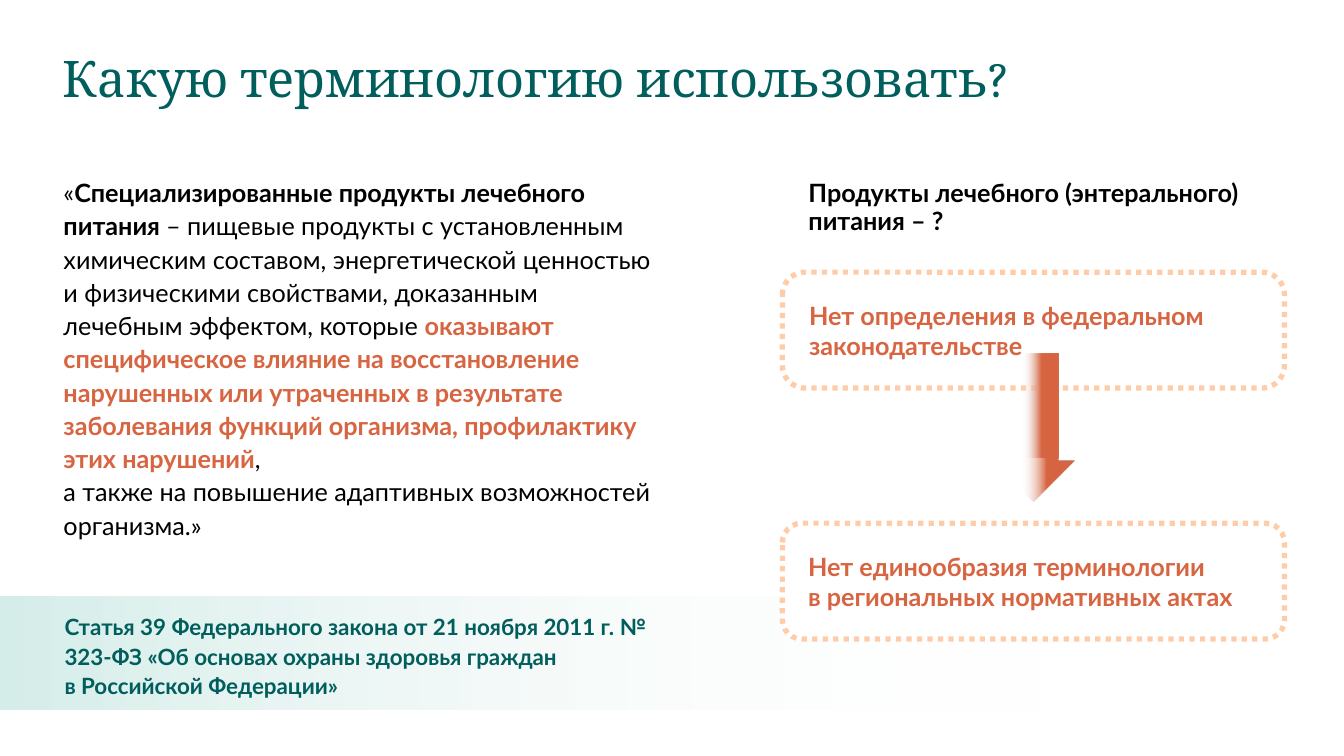
from dataclasses import dataclass

from lxml import etree
from pptx import Presentation
from pptx import util as u
from pptx.dml.color import RGBColor
from pptx.enum import dml, shapes, text
from pptx.oxml.ns import qn


@dataclass(frozen=True)
class Theme:
    """Colours, fonts and type sizes of the slide."""
    white: str = "FFFFFF"
    black: str = "000000"
    teal: str = "005E5C"
    mint: str = "D6EEEA"
    orange: str = "D86541"
    peach: str = "FFCCA9"
    grey: str = "F2F2F2"
    serif: str = "Cambria"
    sans: str = "Lato"
    title: int = 36
    body: int = 18
    source: int = 16


T = Theme()
TIGHT = (0, 0, 0.1, 0.05)
NORMAL = (0.1, 0.05, 0.1, 0.05)


def set_all(obj, values):
    """Set every attribute named in the dict."""
    for name, value in values.items():
        setattr(obj, name, value)


def place(box):
    """Turn a box in inches into lengths."""
    return [u.Inches(v) for v in box]


def write(tf, paragraphs, size, font=T.sans, insets=NORMAL, spacing=None,
          anchor=text.MSO_ANCHOR.TOP, indent=0):
    """Fill a frame with paragraphs of (words, colour, bold) runs."""
    sides = ("margin_left", "margin_top", "margin_right", "margin_bottom")
    set_all(tf, dict(zip(sides, place(insets)), word_wrap=True,
                     auto_size=text.MSO_AUTO_SIZE.NONE, vertical_anchor=anchor))
    for i, runs in enumerate(paragraphs):
        p = tf.add_paragraph() if i else tf.paragraphs[0]
        set_all(p, dict(alignment=text.PP_ALIGN.LEFT, line_spacing=spacing))
        if indent:
            p._p.get_or_add_pPr().set("marL", str(u.Inches(indent)))
        for words, colour, bold in runs:
            for j, line in enumerate(words.split("\n")):
                if j:
                    p.add_line_break()
                r = p.add_run()
                r.text = line
                set_all(r.font, dict(size=u.Pt(size), name=font, bold=bold))
                r.font.color.rgb = RGBColor.from_string(colour)


def add_shape(parent, kind, box):
    """Add a preset shape without shadow or line."""
    sp = parent.add_shape(kind, *place(box))
    sp.shadow.inherit = False
    sp.line.fill.background()
    return sp


def fade(sp, stops, angle):
    """Fill a shape with a gradient whose first stop is transparent."""
    sp.fill.gradient()
    sp.fill.gradient_angle = angle
    for stop, (position, colour) in zip(sp.fill.gradient_stops, stops):
        stop.position = position
        stop.color.rgb = RGBColor.from_string(colour)
    grad = sp._element.spPr.find(qn("a:gradFill"))
    grad.set("rotWithShape", "0")
    etree.SubElement(next(grad.iter(qn("a:srgbClr"))), qn("a:alpha"), val="0")


def add_title(s, box):
    """Place the slide title."""
    sp = s.shapes.title
    set_all(sp, dict(zip(("left", "top", "width", "height"), place(box))))
    write(sp.text_frame, [[("Какую терминологию использовать?", T.teal, False)]],
          T.title, T.serif, (0.12, 0.06, 0.12, 0.06), u.Pt(30),
          text.MSO_ANCHOR.MIDDLE)


def add_source(s, box):
    """Draw the fading band with the law that is cited."""
    left, top, width, height = box
    band = add_shape(s.shapes, shapes.MSO_SHAPE.RECTANGLE, box)
    fade(band, [(0, T.white), (1, T.mint)], 180)
    tb = s.shapes.add_textbox(*place((left + 0.64, top + 0.14, 6.02, height - 0.2)))
    law = ("Статья 39 Федерального закона от 21 ноября 2011 г. № 323-ФЗ "
           "«Об основах охраны здоровья граждан \nв Российской Федерации»")
    write(tb.text_frame, [[(law, T.teal, True)]], T.source, insets=TIGHT, spacing=1.1)


def add_definition(s, box):
    """Write the legal definition."""
    runs = [
        ("«", T.black, False),
        ("Специализированные продукты лечебного питания ", T.black, True),
        ("– пищевые продукты с установленным химическим составом, энергетической "
         "ценностью и физическими свойствами, доказанным лечебным эффектом, "
         "которые ", T.black, False),
        ("оказывают специфическое влияние на восстановление нарушенных или "
         "утраченных в результате заболевания функций организма, профилактику "
         "этих нарушений", T.orange, True),
        (", \nа также на повышение адаптивных возможностей организма.»",
         T.black, False),
    ]
    tb = s.shapes.add_textbox(*place(box))
    write(tb.text_frame, [runs], T.body, insets=TIGHT, spacing=1.1)


def add_arrow(s, box):
    """Draw the fading downward arrow from a turned arrow and its shaft."""
    left, top, width, height = box
    middle = left + width / 2
    group = s.shapes.add_group_shape()
    parts = ((shapes.MSO_SHAPE.RIGHT_ARROW, height, width),
             (shapes.MSO_SHAPE.RECTANGLE, 0.7 * height, 0.6 * width))
    for kind, length, breadth in parts:
        sp = add_shape(group.shapes, kind, (middle - length / 2,
                                            top + (length - breadth) / 2,
                                            length, breadth))
        sp.rotation = 90
        fade(sp, [(0.36, T.grey), (0.66, T.orange)], 0)
        if kind == shapes.MSO_SHAPE.RIGHT_ARROW:
            sp.adjustments[0] = 0.6


def add_problems(s, box):
    """Place the question, its two dotted cards and the arrow."""
    left, top, width, height = box
    cards = [
        (0.97, 0.196, ["Нет определения в федеральном законодательстве"]),
        (3.46, 0.167, ["Нет единообразия терминологии",
                       "в региональных нормативных актах"]),
    ]
    for offset, corner, lines in cards:
        sp = add_shape(s.shapes, shapes.MSO_SHAPE.ROUNDED_RECTANGLE,
                       (left, top + offset, width, 1.15))
        sp.adjustments[0] = corner
        sp.fill.solid()
        sp.fill.fore_color.rgb = RGBColor.from_string(T.white)
        sp.line.color.rgb = RGBColor.from_string(T.peach)
        set_all(sp.line, dict(width=u.Pt(3.75),
                              dash_style=dml.MSO_LINE.ROUND_DOT))
        write(sp.text_frame, [[(line, T.orange, True)] for line in lines], T.body,
              anchor=text.MSO_ANCHOR.MIDDLE, indent=0.1)
    tb = s.shapes.add_textbox(*place((left + 0.16, top, width + 0.16, 0.66)))
    write(tb.text_frame,
          [[("Продукты лечебного (энтерального) питания – ?", T.black, True)]],
          T.body, spacing=u.Pt(20))
    add_arrow(s, (left + width / 2 - 0.41, top + 1.78, 0.82, 1.47))


def main():
    """Build and save the slide."""
    prs = Presentation()
    set_all(prs, dict(slide_width=u.Inches(13.33), slide_height=u.Inches(7.5)))
    s = prs.slides.add_slide(prs.slide_layouts[5])
    add_source(s, (0, 5.92, 10.38, 1.12))
    add_definition(s, (0.63, 1.73, 6.04, 3.69))
    add_problems(s, (7.76, 1.73, 4.98, 4.61))
    add_title(s, (0.5, 0.47, 12.01, 0.77))
    prs.save("out.pptx")


if __name__ == "__main__":
    main()
